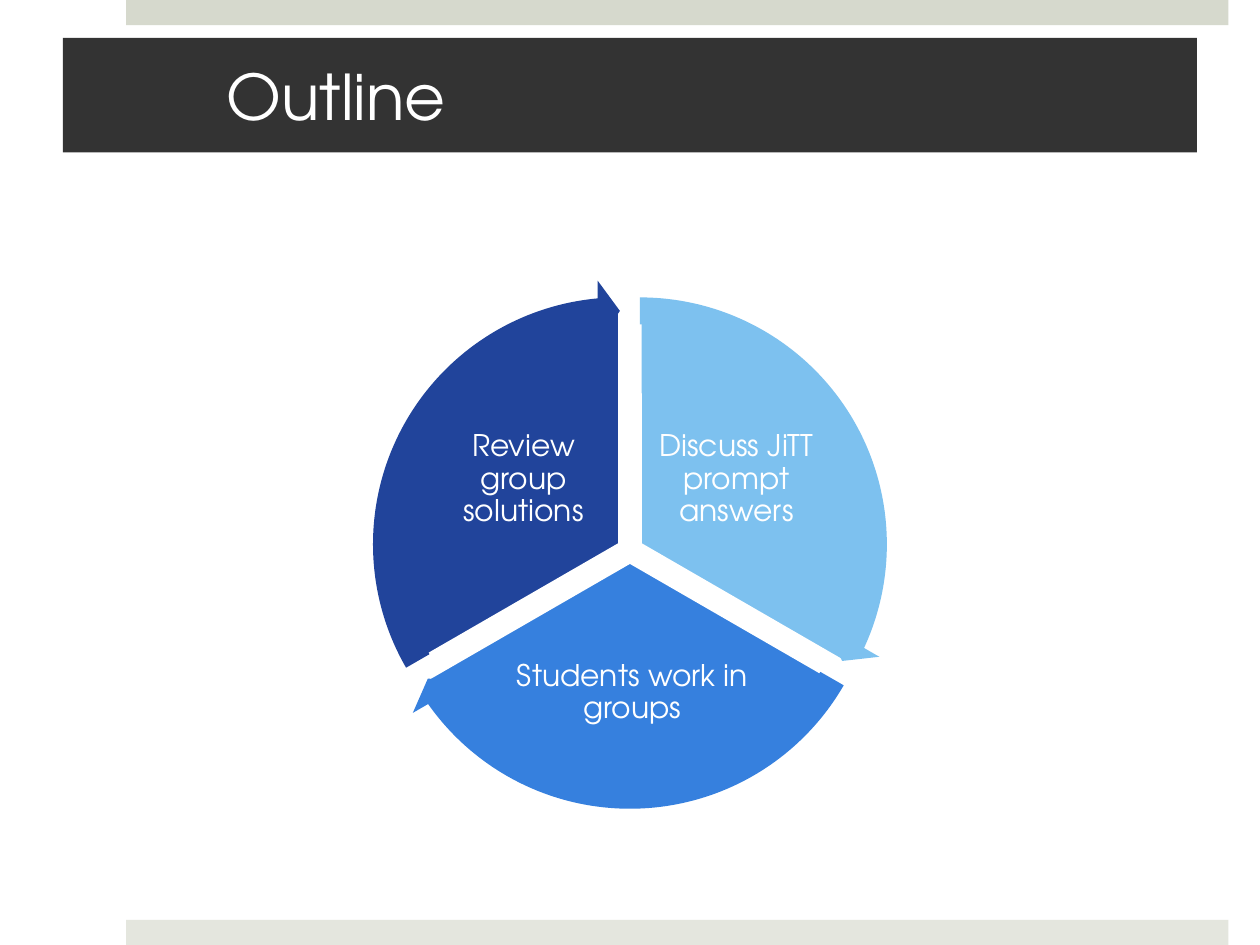
import pptx
import pptx.util
import pptx.dml.color
import pptx.enum.shapes
import pptx.enum.text

Inches = pptx.util.Inches
Pt = pptx.util.Pt
KIND = pptx.enum.shapes.MSO_SHAPE
ALIGN = pptx.enum.text.PP_ALIGN
FONT = "TeX Gyre Adventor"
HUES = {
    "top": "D6D9CD",
    "foot": "E4E6DE",
    "title": "333333",
    "white": "FFFFFF",
    "sky": "7DC1EF",
    "blue": "3680DE",
    "navy": "21449B",
}


def rgb(hue):
    return pptx.dml.color.RGBColor.from_string(HUES[hue])


def shape(slide, kind, box, hue, angles=()):
    item = slide.shapes.add_shape(kind, *map(Inches, box))
    item.shadow.inherit = False
    item.fill.solid()
    item.fill.fore_color.rgb = rgb(hue)
    item.line.fill.background()
    for spot, angle in enumerate(angles):
        item.adjustments[spot] = angle
    return item


def write(item, text, size, align, inset):
    frame = item.text_frame
    frame.word_wrap = True
    frame.vertical_anchor = pptx.enum.text.MSO_ANCHOR.MIDDLE
    (frame.margin_left, frame.margin_top,
     frame.margin_right, frame.margin_bottom) = map(Inches, inset)
    frame.text = text
    line = frame.paragraphs[0]
    line.alignment = align
    font = line.runs[0].font
    font.name = FONT
    font.size = Pt(size)
    font.color.rgb = rgb("white")
    return line


def bands(slide, box):
    left, top, width, height = box
    deep = 0.2
    shape(slide, KIND.RECTANGLE, (left, top, width, deep), "top")
    shape(slide, KIND.RECTANGLE, (left, top + height - deep, width, deep), "foot")


def title(slide, box):
    bar = shape(slide, KIND.RECTANGLE, box, "title")
    write(bar, "Outline", 36, ALIGN.LEFT, (1.3, 0.05, 0.3, 0.05))


def cycle(slide, box):
    left, top, width, height = box
    pie, ring = 3.73, 4.2
    mid = left + width / 2
    steps = [
        ("Discuss JiTT prompt answers", "sky", (0.08, 2.1),
         (162, 18), (14.725, 161.994), (2.35, 1.03, 1.33, 1.11)),
        ("Students work in groups", "blue", (0, 2.24),
         (18, 90), (86.72, 18.005), (1.19, 2.79, 2, 0.98)),
        ("Review group solutions", "navy", (-0.08, 2.1),
         (90, 162), (158.73, 90), (0.66, 1.03, 1.33, 1.11)),
    ]

    def around(shift, size):
        return (mid + shift[0] - size / 2, top + shift[1] - size / 2, size, size)

    for text, hue, shift, span, _, spot in steps:
        wedge = shape(slide, KIND.PIE, around(shift, pie), hue, span)
        wedge.line.color.rgb = rgb("white")
        wedge.line.width = Pt(2)
        x, y, wide, high = spot
        label = slide.shapes.add_textbox(
            *map(Inches, (left + x, top + y, wide, high)))
        line = write(label, text, 17, ALIGN.CENTER, (0.02,) * 4)
        line.line_spacing = 0.9

    for _, hue, shift, _, sweep, _ in steps:
        shape(slide, KIND.CIRCULAR_ARROW, around(shift, ring), hue,
              (0.051, 3.275, *sweep, 0.059))


def main():
    deck = pptx.Presentation()
    deck.slide_width = Inches(10)
    deck.slide_height = Inches(7.5)
    slide = deck.slides.add_slide(deck.slide_layouts[6])
    bands(slide, (1, 0, 8.75, 7.5))
    title(slide, (0.5, 0.3, 9, 0.91))
    cycle(slide, (2.83, 2.22, 4.34, 4.34))
    deck.save("out.pptx")


if __name__ == "__main__":
    main()
